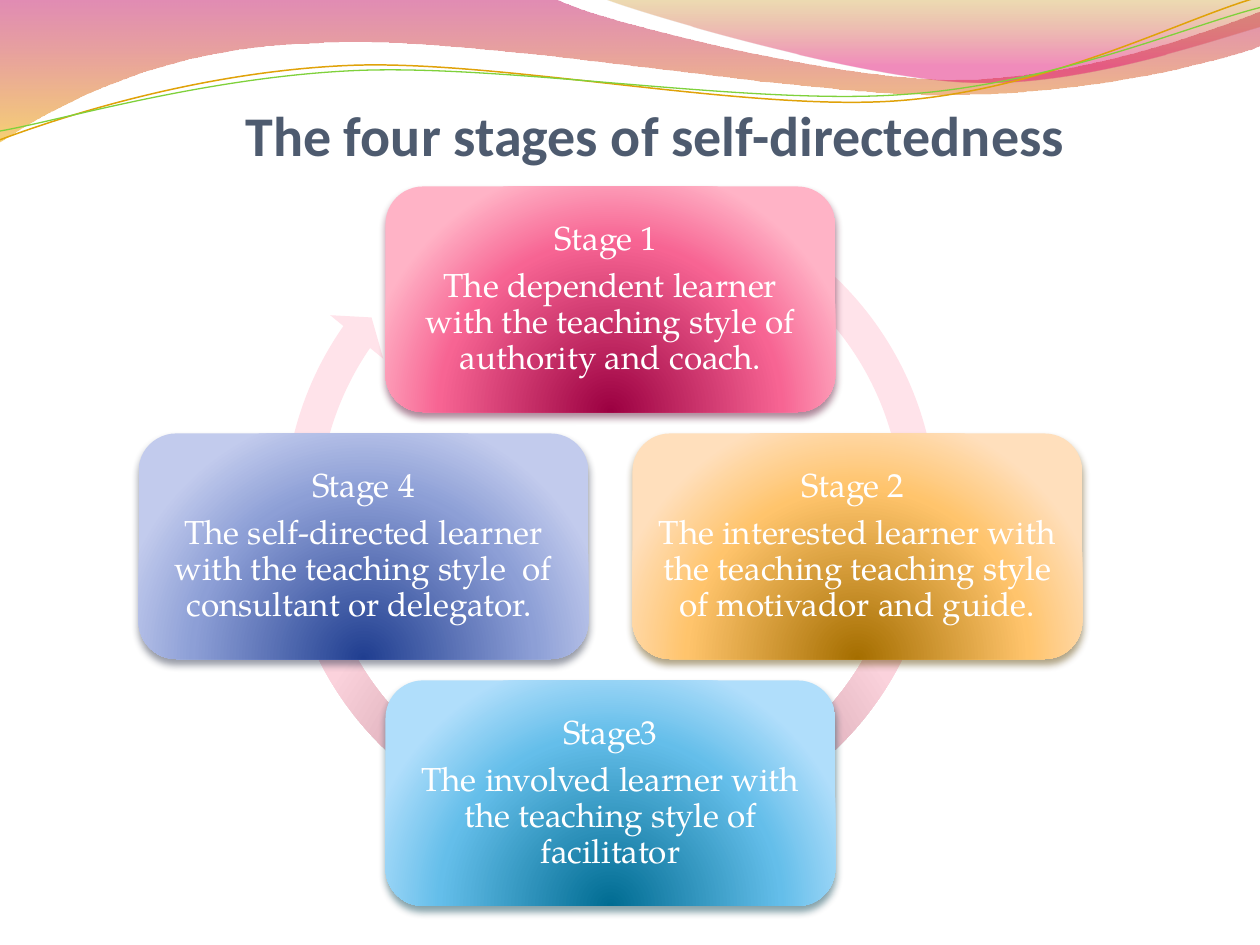
"""Build a slide showing the four stages of self-directedness as a cycle."""
import math

from pptx import Presentation, util as u
from pptx.dml.color import RGBColor
from pptx.enum import shapes, text
from pptx.oxml import parse_xml
from pptx.oxml.ns import nsdecls, qn

TITLE = "The four stages of self-directedness"
STAGES = [
    ("Stage 1 ", "The dependent learner with the teaching style of authority and coach.", "pink"),
    ("Stage 2 ", "The interested learner with the teaching teaching style of motivador and guide.", "amber"),
    ("Stage3", "The involved learner with the teaching style of facilitator", "blue"),
    ("Stage 4", "The self-directed learner with the teaching style  of consultant or delegator. ", "indigo"),
]
COLORS = {
    "title": "4E5B6F", "text": "FFFFFF", "gold": "E0A209", "green": "7FD13B",
    "pink": ("9B0041", "F76493", "FFB3C6"), "pink shadow": "54062B",
    "amber": ("A56E00", "FFC46C", "FFDFBC"), "amber shadow": "5B4101",
    "blue": ("006C92", "64BEEA", "B0DEFB"), "blue shadow": "003D4D",
    "indigo": ("203E90", "8D9FD6", "C2CBED"), "indigo shadow": "283047",
    "ring": ("985F6D", "FBD2DC", "FFE3EA"),
    "left wave": ((0, "BD0059", 45), (100, "F0AB00", 55)),
    "right wave": ((0, "C38B00", 30), (80, "E1006B", 45)),
}
WAVES = [
    ("left wave", [
        (0, 0), (4.4, -0.01),
        (4.76, 0.17, 6.64, 0.63, 7.58, 0.63), (8.53, 0.63, 9.58, 0.26, 10, 0.09),
        (10.01, 0.36),
        (9.83, 0.44, 8.7, 0.76, 7.46, 0.75), (6.22, 0.75, 3.82, 0.28, 2.57, 0.34),
        (1.29, 0.36, 0.46, 0.83, -0.01, 1.13)]),
    ("right wave", [
        (4.79, -0.01),
        (5.09, 0.11, 6.82, 0.62, 7.69, 0.65), (8.56, 0.69, 9.61, 0.32, 10, 0.21),
        (10, 0)]),
]
STRANDS = [
    ("gold", 0.85, [
        (0, 1.11), (0.48, 0.93, 1.58, 0.57, 2.77, 0.52),
        (3.95, 0.47, 5.93, 0.89, 7.13, 0.8), (8.33, 0.71, 9.38, 0.15, 9.98, -0.02)]),
    ("green", 0.75, [
        (0, 1.04), (0.47, 0.96, 1.64, 0.61, 2.83, 0.56),
        (4.03, 0.51, 5.97, 0.84, 7.17, 0.75), (8.36, 0.67, 9.41, 0.21, 10, 0.06)]),
]
HUB_LEFT, HUB_TOP, ORBIT = 3.06, 3.44, 1.96
CARD_W, CARD_H = 3.57, 1.79
RING_BOX = (2.12, 1.35, 5.45, 5.45)
RING_ADJUSTMENTS = (0.05, 2.73, 128.89, 179.92, 0.05)


def add_curve(slide, segments, close):
    anchors = [tuple(map(u.Inches, segment[-2:])) for segment in segments]
    builder = slide.shapes.build_freeform(*anchors[0])
    builder.add_line_segments(anchors[1:], close=close)
    curve = builder.convert_to_shape()
    curve.shadow.inherit = False
    curve.fill.background()
    for line, segment in zip(list(curve.element.iter(qn("a:lnTo"))), segments[1:]):
        if len(segment) == 6:
            points = "".join(
                f'<a:pt x="{u.Inches(x) - curve.left}" y="{u.Inches(y) - curve.top}"/>'
                for x, y in zip(segment[::2], segment[1::2]))
            bend = parse_xml(f'<a:cubicBezTo {nsdecls("a")}>{points}</a:cubicBezTo>')
            line.getparent().replace(line, bend)
    return curve


def fill_gradient(shape, stops, direction):
    shape.fill.background()
    shape.line.fill.background()
    stop_xml = "".join(
        f'<a:gs pos="{pos * 1000}"><a:srgbClr val="{color}"><a:alpha val="{alpha * 1000}"/></a:srgbClr></a:gs>'
        for pos, color, alpha in stops)
    gradient = parse_xml(
        f'<a:gradFill {nsdecls("a")} rotWithShape="1"><a:gsLst>{stop_xml}</a:gsLst>{direction}</a:gradFill>')
    properties = shape.element.spPr
    properties.replace(properties.find(qn("a:noFill")), gradient)


def fill_glow(shape, colors):
    stops = [(pos, color, 100) for pos, color in zip((0, 68, 100), colors)]
    fill_gradient(shape, stops, '<a:path path="circle"><a:fillToRect l="50000" t="130000" '
                                'r="50000" b="-30000"/></a:path>')


def add_shadow(shape, color):
    shape.element.spPr.find(qn("a:effectLst")).append(parse_xml(
        f'<a:outerShdw {nsdecls("a")} blurRad="{u.Pt(4.5)}" dist="{u.Pt(3)}" dir="5400000" rotWithShape="0">'
        f'<a:srgbClr val="{color}"><a:alpha val="48000"/></a:srgbClr></a:outerShdw>'))


def add_preset(slide, kind, *box):
    shape = slide.shapes.add_shape(kind, *map(u.Inches, box))
    shape.shadow.inherit = False
    return shape


def set_frame(frame, anchor, insets):
    frame.word_wrap = True
    frame.vertical_anchor = anchor
    frame.margin_left, frame.margin_top, frame.margin_right, frame.margin_bottom = map(u.Inches, insets)


def write(paragraph, words, font, size, color, bold=False):
    paragraph.alignment = text.PP_ALIGN.CENTER
    run = paragraph.add_run()
    run.text = words
    run.font.name, run.font.size, run.font.bold = font, u.Pt(size), bold
    run.font.color.rgb = RGBColor.from_string(COLORS[color])


def add_card(slide, index, heading, description, hue):
    angle = math.radians(90 * index - 90)
    left = HUB_LEFT + ORBIT * math.cos(angle)
    top = HUB_TOP + ORBIT * math.sin(angle)
    card = add_preset(slide, shapes.MSO_SHAPE.ROUNDED_RECTANGLE, left, top, CARD_W, CARD_H)
    fill_glow(card, COLORS[hue])
    add_shadow(card, COLORS[hue + " shadow"])
    frame = card.text_frame
    set_frame(frame, text.MSO_ANCHOR.MIDDLE, [0.08] * 4)
    for paragraph, words in zip((frame.paragraphs[0], frame.add_paragraph()), (heading, description)):
        paragraph.line_spacing = 0.9
        paragraph.space_after = u.Pt(6.65)
        write(paragraph, words, "TeX Gyre Pagella", 19, "text")


def main():
    deck = Presentation()
    deck.slide_width, deck.slide_height = u.Inches(10), u.Inches(7.5)
    slide = deck.slides.add_slide(deck.slide_layouts[6])

    for hue, segments in WAVES:
        wave = add_curve(slide, segments, close=True)
        fill_gradient(wave, COLORS[hue], '<a:lin ang="5400000" scaled="0"/>')
    for hue, width, segments in STRANDS:
        strand = add_curve(slide, segments, close=False)
        strand.line.color.rgb = RGBColor.from_string(COLORS[hue])
        strand.line.width = u.Pt(width)

    title = slide.shapes.add_textbox(*map(u.Inches, (0.7, 0.08, 9, 1.25))).text_frame
    set_frame(title, text.MSO_ANCHOR.BOTTOM, (0, 0.05, 0, 0))
    write(title.paragraphs[0], TITLE, "Calibri", 32, "title", bold=True)

    ring = add_preset(slide, shapes.MSO_SHAPE.CIRCULAR_ARROW, *RING_BOX)
    for number, value in enumerate(RING_ADJUSTMENTS):
        ring.adjustments[number] = value
    fill_glow(ring, COLORS["ring"])

    for index, stage in enumerate(STAGES):
        add_card(slide, index, *stage)
    deck.save("out.pptx")


if __name__ == "__main__":
    main()
